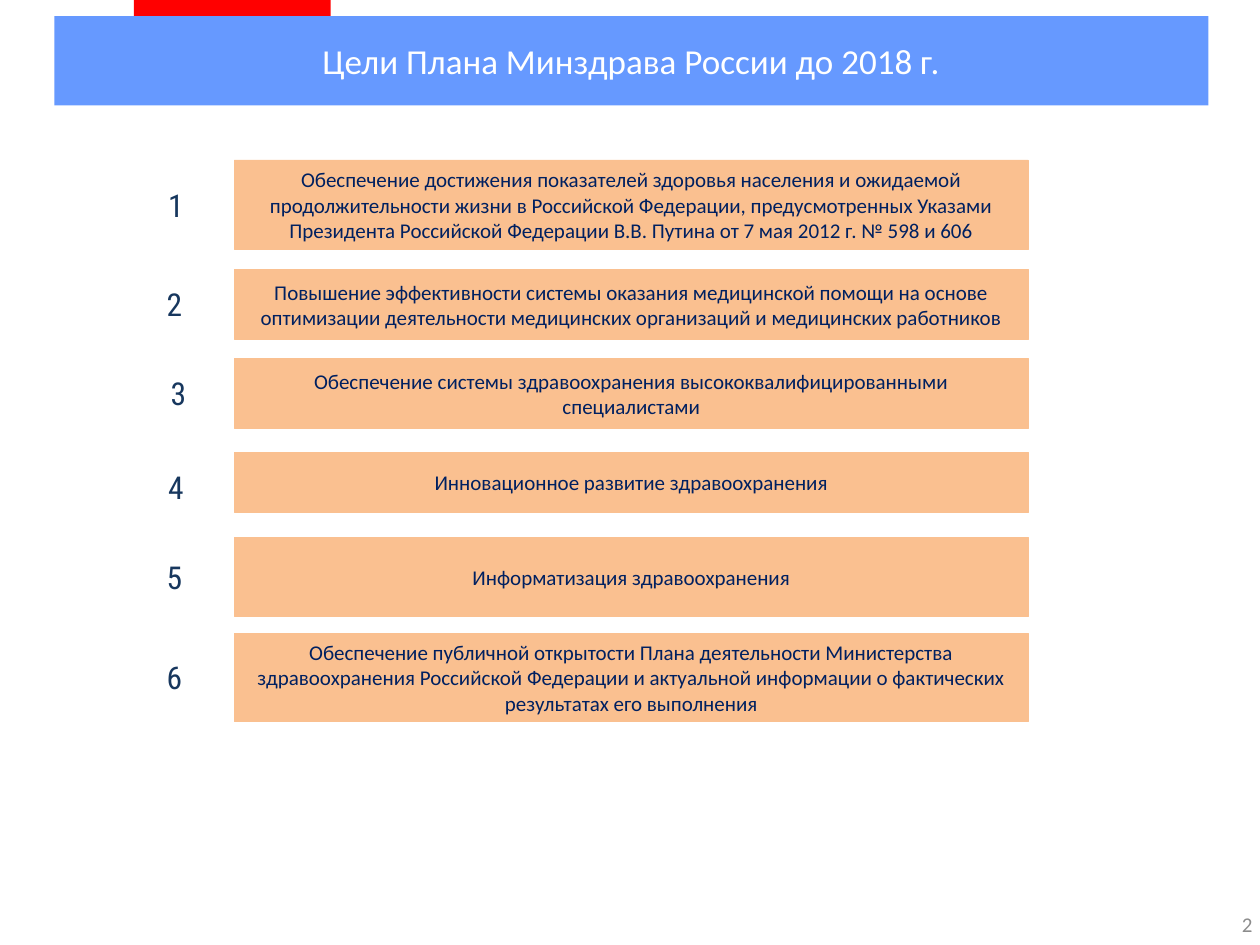
from dataclasses import dataclass

from pptx import Presentation
from pptx.dml.color import RGBColor
from pptx.enum.shapes import MSO_SHAPE
from pptx.enum.text import MSO_ANCHOR, MSO_AUTO_SIZE, PP_ALIGN
from pptx.util import Pt

RECTANGLE = MSO_SHAPE.RECTANGLE
MIDDLE = MSO_ANCHOR.MIDDLE
NO_FIT = MSO_AUTO_SIZE.NONE
CENTER, RIGHT = PP_ALIGN.CENTER, PP_ALIGN.RIGHT


@dataclass(frozen=True)
class Theme:
    # Colours
    header: str = "6699FF"
    accent: str = "FF0000"
    bar: str = "FAC090"
    white: str = "FFFFFF"
    goal_text: str = "002060"
    number_text: str = "17375E"
    page_text: str = "8C8C8C"
    # Type
    body_font: str = "Calibri"
    number_font: str = "Roboto Condensed"
    title_size: float = 20
    number_size: float = 18
    body_size: float = 12


# Bar top, bar height, number left, number top, wording
GOALS = [
    (91.4, 51.1, 77.8, 97.2,
     "Обеспечение достижения показателей здоровья населения и ожидаемой "
     "продолжительности жизни в Российской Федерации, предусмотренных Указами "
     "Президента Российской Федерации В.В. Путина от 7 мая 2012 г. № 598 и 606"),
    (154.1, 39.6, 77, 154.1,
     "Повышение эффективности системы оказания медицинской помощи на основе "
     "оптимизации деятельности медицинских организаций и медицинских работников"),
    (204.8, 39.9, 79.2, 204.8,
     "Обеспечение системы здравоохранения высококвалифицированными специалистами"),
    (258.5, 34.2, 77.8, 258.5, "Инновационное развитие здравоохранения"),
    (307, 45.2, 77, 309.6, "Информатизация здравоохранения"),
    (362, 50.4, 77, 367.2,
     "Обеспечение публичной открытости Плана деятельности Министерства "
     "здравоохранения Российской Федерации и актуальной информации о фактических "
     "результатах его выполнения"),
]
BAR_LEFT, BAR_WIDTH = 134, 453.6
NUMBER_WIDTH, NUMBER_HEIGHT = 45.4, 39.6


class PageBuilder:
    def __init__(self, page, theme):
        self.page = page
        self.theme = theme

    def paint(self, shape, color, outline=None):
        shape.fill.solid()
        shape.fill.fore_color.rgb = RGBColor.from_string(color)
        if outline:
            shape.line.color.rgb = RGBColor.from_string(color)
            shape.line.width = Pt(outline)
        else:
            shape.line.fill.background()

    def set_text(self, shape, text, size, color, font=None, align=CENTER):
        frame = shape.text_frame
        frame_format = {"word_wrap": True, "auto_size": NO_FIT,
                        "vertical_anchor": MIDDLE}
        for name, value in frame_format.items():
            setattr(frame, name, value)
        para = frame.paragraphs[0]
        para.alignment = align
        span = para.add_run()
        span.text = text
        span_format = {"name": font or self.theme.body_font,
                       "size": Pt(size), "bold": False}
        for name, value in span_format.items():
            setattr(span.font, name, value)
        span.font.color.rgb = RGBColor.from_string(color)

    def title(self, text, left, top, width, height):
        title = self.page.shapes.title
        place = {"left": left, "top": top, "width": width, "height": height}
        for name, value in place.items():
            setattr(title, name, Pt(value))
        self.paint(title, self.theme.header)
        self.set_text(title, text, self.theme.title_size, self.theme.white)

    def block(self, left, top, width, height, color, outline=None):
        shape = self.page.shapes.add_shape(
            RECTANGLE, Pt(left), Pt(top), Pt(width), Pt(height))
        shape.shadow.inherit = False
        self.paint(shape, color, outline)
        return shape

    def label(self, left, top, width, height, text, size, color, **style):
        box = self.page.shapes.add_textbox(
            Pt(left), Pt(top), Pt(width), Pt(height))
        self.set_text(box, text, size, color, **style)


def main():
    theme = Theme()
    deck = Presentation()
    deck.slide_width, deck.slide_height = Pt(720), Pt(540)
    page = deck.slides.add_slide(deck.slide_layouts[5])
    builder = PageBuilder(page, theme)

    # Header band, page number and red tab
    builder.title("Цели Плана Минздрава России до 2018 г.", 31, 9.2, 659.5, 51)
    builder.label(555.1, 513.4, 167.8, 28.8, "2", theme.body_size,
                  theme.page_text, align=RIGHT)
    builder.block(76.5, -2.2, 112.5, 11.4, theme.accent)

    # Numbered goals
    for number, (top, height, number_left, number_top, text) in enumerate(GOALS, 1):
        bar = builder.block(BAR_LEFT, top, BAR_WIDTH, height, theme.bar, 0.25)
        builder.set_text(bar, text, theme.body_size, theme.goal_text)
        builder.label(number_left, number_top, NUMBER_WIDTH, NUMBER_HEIGHT,
                      str(number), theme.number_size, theme.number_text,
                      font=theme.number_font)

    deck.save("out.pptx")


if __name__ == "__main__":
    main()
